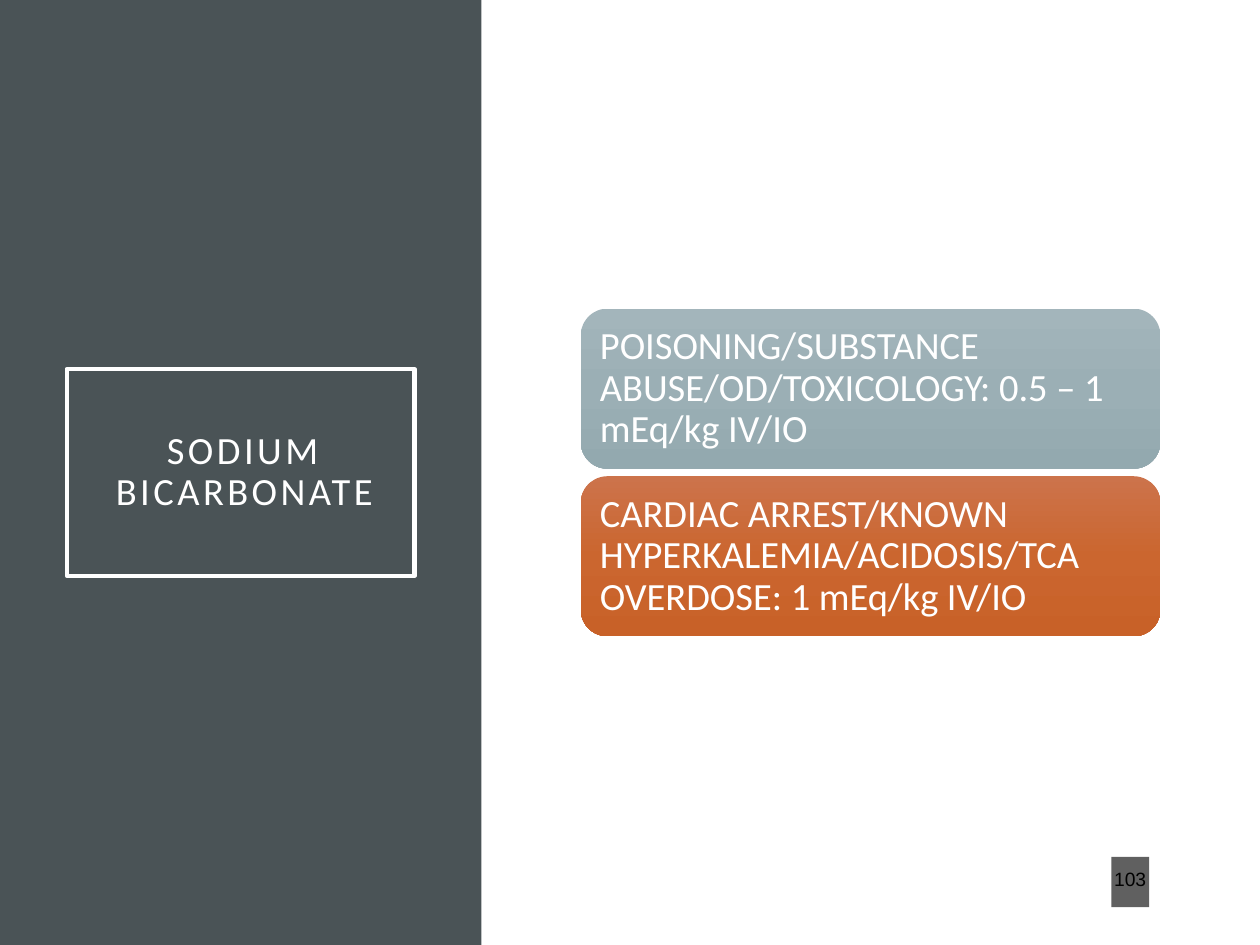
from copy import deepcopy

from lxml.etree import SubElement
from pptx import Presentation
from pptx.dml.color import RGBColor
from pptx.enum.shapes import MSO_SHAPE
from pptx.enum.text import MSO_ANCHOR, MSO_AUTO_SIZE, PP_ALIGN
from pptx.oxml.ns import qn
from pptx.util import Inches, Pt

WHITE = RGBColor(0xFF, 0xFF, 0xFF)
BLACK = RGBColor(0x00, 0x00, 0x00)
SLATE = RGBColor(0x4A, 0x53, 0x56)
CHARCOAL = RGBColor(0x1D, 0x1D, 0x1D)
BLUE_GREY_STOPS = (RGBColor(0xA3, 0xB5, 0xBB), RGBColor(0x9B, 0xAF, 0xB5),
                   RGBColor(0x93, 0xA9, 0xAF))
ORANGE_STOPS = (RGBColor(0xCC, 0x73, 0x4B), RGBColor(0xCB, 0x66, 0x2F),
                RGBColor(0xC8, 0x61, 0x28))

DOSES = [
    ("POISONING/SUBSTANCE ABUSE/OD/TOXICOLOGY: 0.5 – 1 mEq/kg IV/IO", BLUE_GREY_STOPS),
    ("CARDIAC ARREST/KNOWN HYPERKALEMIA/ACIDOSIS/TCA OVERDOSE: 1 mEq/kg IV/IO", ORANGE_STOPS),
]


def add_plain_shape(slide, kind, left, top, width, height):
    """Add a shape without line or shadow."""
    shape = slide.shapes.add_shape(kind, Inches(left), Inches(top), Inches(width), Inches(height))
    shape.shadow.inherit = False
    shape.line.fill.background()
    return shape


def set_text(shape, text, size, font_name, color, alignment, line_spacing, insets):
    """Fill a shape with one paragraph; insets run left, top, right, bottom."""
    frame = shape.text_frame
    frame.text = text
    frame.word_wrap = True
    frame.auto_size = MSO_AUTO_SIZE.NONE
    frame.vertical_anchor = MSO_ANCHOR.MIDDLE
    (frame.margin_left, frame.margin_top,
     frame.margin_right, frame.margin_bottom) = map(Inches, insets)
    paragraph = frame.paragraphs[0]
    paragraph.alignment = alignment
    paragraph.line_spacing = line_spacing
    paragraph.space_before = Pt(0)
    font = paragraph.font
    font.size = Pt(size)
    font.name = font_name
    font.color.rgb = color
    return paragraph


def set_vertical_gradient(fill, colors):
    """Spread three colours evenly from top to bottom."""
    fill.gradient()
    fill.gradient_angle = 270
    first = fill.gradient_stops[0]._gs
    first.addnext(deepcopy(first))
    for index, (stop, color) in enumerate(zip(fill.gradient_stops, colors)):
        stop.position = index / (len(colors) - 1)
        stop.color.rgb = color


def add_side_panel(slide, left, top, width, height):
    panel = add_plain_shape(slide, MSO_SHAPE.RECTANGLE, left, top, width, height)
    panel.fill.solid()
    panel.fill.fore_color.rgb = SLATE
    slide.shapes._spTree.insert(2, panel._element)  # behind the title


def place_title(slide, text, left, top, width, height):
    title = slide.shapes.title
    title.left, title.top = Inches(left), Inches(top)
    title.width, title.height = Inches(width), Inches(height)
    title.line.color.rgb = WHITE
    title.line.width = Pt(2.5)
    paragraph = set_text(title, text, 22, "Calibri", WHITE, PP_ALIGN.CENTER, 0.9,
                         (0.2, 0.2, 0.14, 0.2))
    paragraph.font._element.set("spc", "200")


def add_dose_cards(slide, doses, left, top, width, height, gap):
    card_height = (height - gap * (len(doses) - 1)) / len(doses)
    for index, (text, colors) in enumerate(doses):
        card = add_plain_shape(slide, MSO_SHAPE.ROUNDED_RECTANGLE, left,
                               top + index * (card_height + gap), width, card_height)
        set_vertical_gradient(card.fill, colors)
        set_text(card, text, 22, "Calibri", WHITE, PP_ALIGN.LEFT, 0.9, (0.09,) * 4)


def add_page_number(slide, number, left, top, width, height):
    badge = add_plain_shape(slide, MSO_SHAPE.RECTANGLE, left, top, width, height)
    badge.fill.solid()
    badge.fill.fore_color.rgb = CHARCOAL
    color = badge.fill._xPr.find(qn("a:solidFill"))[0]
    SubElement(color, qn("a:alpha"), val="70000")
    paragraph = set_text(badge, number, 11, "Arial", BLACK, PP_ALIGN.CENTER, 0.7,
                         (0.02, 0.05, 0.02, 0.05))
    paragraph.space_after = Pt(6)


def main():
    presentation = Presentation()
    presentation.slide_width, presentation.slide_height = Inches(10), Inches(7.5)
    slide = presentation.slides.add_slide(presentation.slide_layouts.get_by_name("Title Only"))
    add_side_panel(slide, 0, 0, 3.82, 7.5)
    place_title(slide, "SODIUM BICARBONATE", 0.53, 2.93, 2.76, 1.64)
    add_page_number(slide, "103", 8.82, 6.8, 0.3, 0.4)
    add_dose_cards(slide, DOSES, 4.61, 2.45, 4.6, 2.6, 0.06)
    presentation.save("out.pptx")


if __name__ == "__main__":
    main()
